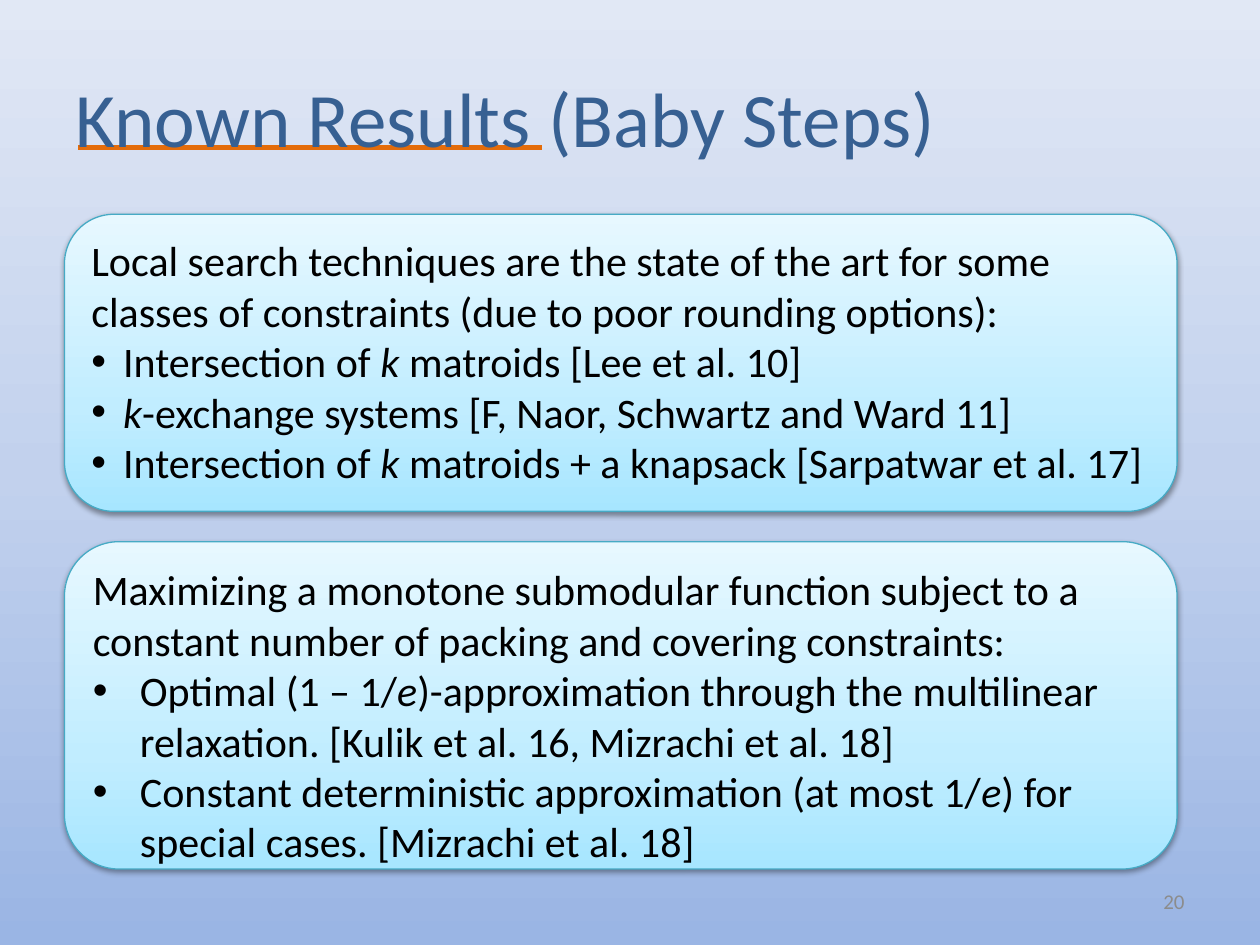
from copy import deepcopy

from lxml.etree import SubElement
from pptx import Presentation
from pptx.dml.color import RGBColor
from pptx.enum.shapes import MSO_CONNECTOR as Line, MSO_SHAPE as Preset
from pptx.enum.text import MSO_ANCHOR as Anchor, PP_ALIGN as Align
from pptx.oxml.ns import qn
from pptx.util import Cm, Pt

TITLE = "Known Results (Baby Steps)"
PAGE_NUMBER = "20"
PANELS = [
    {
        "top": 4.32, "height": 5.99, "indent": 0.64,
        "lead": "Local search techniques are the state of the art for some classes "
                "of constraints (due to poor rounding options):",
        "results": [
            "Intersection of *k* matroids [Lee et al. 10]",
            "*k*-exchange systems [F, Naor, Schwartz and Ward 11]",
            "Intersection of *k* matroids + a knapsack [Sarpatwar et al. 17]",
        ],
    },
    {
        "top": 10.92, "height": 6.6, "indent": 0.95,
        "lead": "Maximizing a monotone submodular function subject to a constant "
                "number of packing and covering constraints:",
        "results": [
            "Optimal (1 – 1/*e*)-approximation through the multilinear relaxation. "
            "[Kulik et al. 16, Mizrachi et al. 18]",
            "Constant deterministic approximation (at most 1/*e*) for special cases. "
            "[Mizrachi et al. 18]",
        ],
    },
]
PANEL_LEFT, PANEL_WIDTH = 1.3, 22.43
BACKDROP = [(0, "9AB5E4"), (0.5, "C2D1ED"), (1, "E1E8F5")]
PANEL_FILL = [(0, "A7E6FF"), (0.35, "C1EDFF"), (1, "E7F8FF")]


def rgb(value):
    return RGBColor.from_string(value)


def set_font(paragraph, size, color):
    font = paragraph.font
    font.name, font.size, font.color.rgb = "Calibri", Pt(size), rgb(color)


def set_gradient(element, fill, stops):
    fill.gradient()
    fill.gradient_angle = 90
    stop_list = element.find(".//" + qn("a:gsLst"))
    stop_list.append(deepcopy(stop_list[0]))
    for stop, (position, color) in zip(fill.gradient_stops, stops):
        stop.position, stop.color.rgb = position, rgb(color)


def add_shadow(shape):
    shape.shadow.inherit = False
    effects = shape._element.spPr.find(qn("a:effectLst"))
    shadow = SubElement(effects, qn("a:outerShdw"), blurRad=str(Pt(3.1)),
                        dist=str(Pt(1.6)), dir="5400000", rotWithShape="0")
    black = SubElement(shadow, qn("a:srgbClr"), val="000000")
    SubElement(black, qn("a:alpha"), val="38000")


def add_bullet(paragraph, indent):
    properties = paragraph._p.get_or_add_pPr()
    properties.set("marL", str(Cm(indent)))
    properties.set("indent", str(-Cm(indent)))
    SubElement(properties, qn("a:buFont"), typeface="Arial")
    SubElement(properties, qn("a:buChar"), char="•")


def add_marked_text(paragraph, text):
    for i, part in enumerate(text.split("*")):
        if part:
            run = paragraph.add_run()
            run.text = part
            run.font.italic = i % 2 == 1


def add_panel(slide, top, height, indent, lead, results):
    panel = slide.shapes.add_shape(Preset.ROUNDED_RECTANGLE, Cm(PANEL_LEFT), Cm(top),
                                   Cm(PANEL_WIDTH), Cm(height))
    set_gradient(panel._element, panel.fill, PANEL_FILL)
    panel.line.color.rgb, panel.line.width = rgb("46AAC5"), Pt(0.75)
    add_shadow(panel)
    frame = panel.text_frame
    frame.word_wrap, frame.vertical_anchor = True, Anchor.TOP
    for i, text in enumerate([lead] + results):
        paragraph = frame.add_paragraph() if i else frame.paragraphs[0]
        paragraph.alignment = Align.LEFT
        if i:
            add_bullet(paragraph, indent)
        set_font(paragraph, 24, "000000")
        add_marked_text(paragraph, text)


def main():
    deck = Presentation()
    deck.slide_width, deck.slide_height = Cm(25.4), Cm(19.05)
    slide = deck.slides.add_slide(deck.slide_layouts[5])
    set_gradient(slide._element, slide.background.fill, BACKDROP)

    underline = slide.shapes.add_connector(Line.STRAIGHT, Cm(1.58), Cm(2.97), Cm(10.92), Cm(2.97))
    underline.line.color.rgb, underline.line.width = rgb("E46C0A"), Pt(3)
    SubElement(underline._element.spPr, qn("a:effectLst"))

    title = slide.shapes.title
    title._element.addprevious(underline._element)
    title.left, title.top, title.width, title.height = Cm(1.27), Cm(0.76), Cm(22.86), Cm(3.18)
    title.text = TITLE
    title.text_frame.vertical_anchor = Anchor.MIDDLE
    heading = title.text_frame.paragraphs[0]
    heading.alignment = Align.LEFT
    set_font(heading, 44, "376092")

    number = slide.shapes.add_textbox(Cm(18.21), Cm(17.65), Cm(5.92), Cm(1.02)).text_frame
    number.word_wrap, number.vertical_anchor = True, Anchor.MIDDLE
    number.text = PAGE_NUMBER
    number.paragraphs[0].alignment = Align.RIGHT
    set_font(number.paragraphs[0], 12, "8C8C8C")

    for panel in PANELS:
        add_panel(slide, **panel)
    deck.save("out.pptx")


if __name__ == "__main__":
    main()
